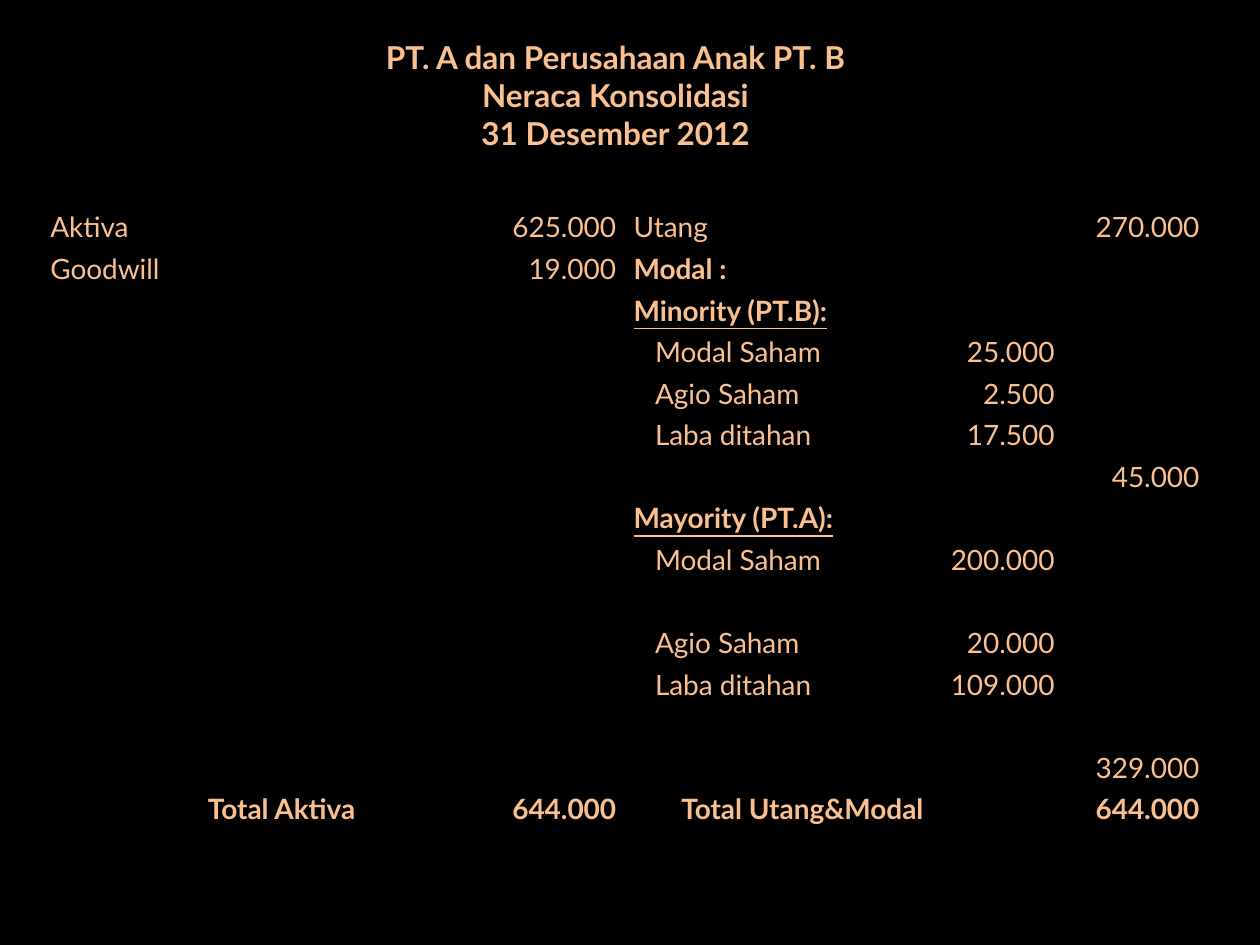
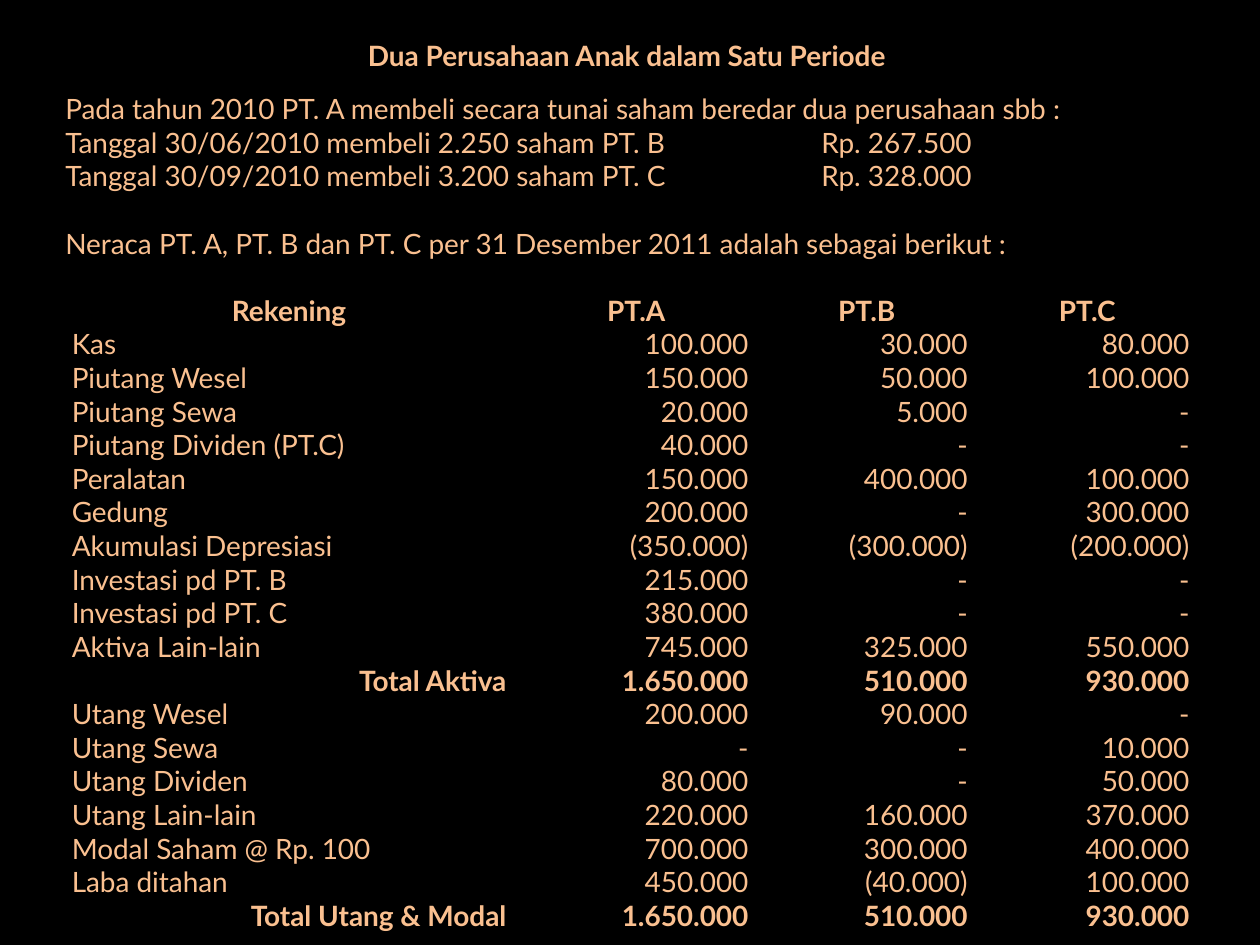
from lxml.etree import SubElement
from pptx import Presentation
from pptx.dml.color import RGBColor
from pptx.enum.shapes import MSO_SHAPE
from pptx.enum.text import MSO_ANCHOR, MSO_AUTO_SIZE, PP_ALIGN as Align
from pptx.oxml.ns import qn
from pptx.util import Inches, Pt

COLORS = {"night": "000000", "peach": "FAC090"}
FONT = "Lato"
BODY_SIZE = 16
NO_GRID_STYLE = "{2D5ABB26-0587-4C30-8999-92F81FD0307C}"
CELL_MARGIN = 0.07
ENTRY_INDENT = 0.17

CONSOLIDATED_COLUMNS = (2.56, 0.94, 1.13, 2.44, 1.04, 1.15)
CONSOLIDATED_HEIGHTS = [0.33] * 8 + [0.66, 0.33, 0.66, 0.33, 0.66]
CONSOLIDATED_ROWS = [
    ("Aktiva", "", "625.000", "Utang", "", "270.000"),
    ("Goodwill", "", "19.000", "Modal :", "", ""),
    ("", "", "", "Minority (PT.B):", "", ""),
    ("", "", "", "Modal Saham", "25.000", ""),
    ("", "", "", "Agio Saham", "2.500", ""),
    ("", "", "", "Laba ditahan", "17.500", ""),
    ("", "", "", "", "", "45.000"),
    ("", "", "", "Mayority (PT.A):", "", ""),
    ("", "", "", "Modal Saham", "200.000", ""),
    ("", "", "", "Agio Saham", "20.000", ""),
    ("", "", "", "Laba ditahan", "109.000", ""),
    ("", "", "", "", "", "329.000"),
    ("Total Aktiva", "", "644.000", "Total Utang&Modal", "", "644.000"),
]

INTRO_LINES = [
    "Pada tahun 2010 PT. A membeli secara tunai saham beredar dua perusahaan sbb :",
    "Tanggal 30/06/2010 membeli 2.250 saham PT. B\tRp. 267.500",
    "Tanggal 30/09/2010 membeli 3.200 saham PT. C\tRp. 328.000",
    "Neraca PT. A, PT. B dan PT. C per 31 Desember 2011 adalah sebagai berikut :",
]

BALANCE_COLUMNS = (3.59, 1.92, 1.74, 1.76)
BALANCE_ROWS = [
    ("Rekening", "PT.A", "PT.B", "PT.C"),
    ("Kas", "100.000", "30.000", "80.000"),
    ("Piutang Wesel", "150.000", "50.000", "100.000"),
    ("Piutang Sewa", "20.000", "5.000", "-"),
    ("Piutang Dividen (PT.C)", "40.000", "-", "-"),
    ("Peralatan", "150.000", "400.000", "100.000"),
    ("Gedung", "200.000", "-", "300.000"),
    ("Akumulasi Depresiasi", "(350.000)", "(300.000)", "(200.000)"),
    ("Investasi pd PT. B", "215.000", "-", "-"),
    ("Investasi pd PT. C", "380.000", "-", "-"),
    ("Aktiva Lain-lain", "745.000", "325.000", "550.000"),
    ("Total Aktiva", "1.650.000", "510.000", "930.000"),
    ("Utang Wesel", "200.000", "90.000", "-"),
    ("Utang Sewa", "-", "-", "10.000"),
    ("Utang Dividen", "80.000", "-", "50.000"),
    ("Utang Lain-lain", "220.000", "160.000", "370.000"),
    ("Modal Saham @ Rp. 100", "700.000", "300.000", "400.000"),
    ("Laba ditahan", "450.000", "(40.000)", "100.000"),
    ("Total Utang & Modal", "1.650.000", "510.000", "930.000"),
]


def color(name):
    """Return the named colour."""
    return RGBColor.from_string(COLORS[name])


def add_text(paragraph, text, align, size=BODY_SIZE, bold=False, underline=False):
    """Add one formatted run to an aligned paragraph."""
    paragraph.alignment = align
    run = paragraph.add_run()
    run.text = text
    font = run.font
    font.name, font.size = FONT, Pt(size)
    font.bold, font.underline = bold, underline
    font.color.rgb = color("peach")


def add_lines(frame, lines, align, **style):
    """Fill a text frame with one paragraph per line."""
    for index, line in enumerate(lines):
        paragraph = frame.paragraphs[0] if index == 0 else frame.add_paragraph()
        add_text(paragraph, line, align, **style)


def add_titled_slide(presentation, lines, box, align, size, margin):
    """Add a dark slide with its title placed in the given box."""
    slide = presentation.slides.add_slide(presentation.slide_layouts[5])
    title = slide.shapes.title
    backdrop = slide.shapes.add_shape(
        MSO_SHAPE.RECTANGLE, 0, 0, presentation.slide_width, presentation.slide_height)
    backdrop.shadow.inherit = False
    backdrop.fill.solid()
    backdrop.fill.fore_color.rgb = color("night")
    backdrop.line.color.rgb = color("night")
    backdrop.line.width = Pt(2)
    title.element.addprevious(backdrop.element)
    title.left, title.top, title.width, title.height = map(Inches, box)
    frame = title.text_frame
    frame.word_wrap = True
    frame.auto_size = MSO_AUTO_SIZE.NONE
    frame.vertical_anchor = MSO_ANCHOR.MIDDLE
    frame.margin_left = frame.margin_right = Inches(margin)
    frame.margin_top = frame.margin_bottom = 0
    add_lines(frame, lines, align, size=size, bold=True)
    return slide


def add_borders(cell, sides):
    """Draw thin borders on the given sides, listed in L, R, T, B order."""
    properties = cell._tc.get_or_add_tcPr()
    for side in sides:
        line = SubElement(properties, qn(f"a:ln{side}"), w=str(Pt(1)))
        fill = SubElement(line, qn("a:solidFill"))
        SubElement(fill, qn("a:srgbClr"), val=COLORS["night"])


def add_plain_table(slide, left, top, widths, heights, rows, cell_style):
    """Add a transparent table whose cell_style rule gives sides, indent and text style."""
    table = slide.shapes.add_table(
        len(rows), len(widths), Inches(left), Inches(top),
        Inches(sum(widths)), Inches(sum(heights))).table
    table.first_row = table.horz_banding = False
    table._tbl.tblPr.find(qn("a:tableStyleId")).text = NO_GRID_STYLE
    for column, width in zip(table.columns, widths):
        column.width = Inches(width)
    for row_index, (row, height) in enumerate(zip(rows, heights)):
        table.rows[row_index].height = Inches(height)
        for column_index, text in enumerate(row):
            cell = table.cell(row_index, column_index)
            sides, indent, style = cell_style(row_index, column_index, text)
            cell.margin_left = Inches(CELL_MARGIN + indent)
            cell.margin_right = Inches(CELL_MARGIN)
            cell.margin_top = cell.margin_bottom = 0
            add_borders(cell, sides)
            cell.fill.background()
            if text:
                add_text(cell.text_frame.paragraphs[0], text, **style)


def consolidated_style(row, column, text):
    """Style a cell of the consolidated balance sheet."""
    is_total = row == len(CONSOLIDATED_ROWS) - 1
    is_group = text.endswith("):")
    is_entry = column == 3 and text in ("Modal Saham", "Agio Saham", "Laba ditahan")
    is_sum = is_total and column in (2, 5)
    sides = "L" if column == 3 else "R" if column == 2 else ""
    sides += "T" if row == 0 or is_sum else ""
    sides += "B" if is_sum or (column == 4 and text and row in (5, 10)) else ""
    align = Align.JUSTIFY if column in (0, 3) and not is_total else Align.RIGHT
    bold = is_total or is_group or text == "Modal :"
    return sides, ENTRY_INDENT if is_entry else 0, dict(
        align=align, bold=bold, underline=is_group)


def balance_style(row, column, text):
    """Style a cell of the three-company balance sheet."""
    is_strong = row == 0 or BALANCE_ROWS[row][0].startswith("Total")
    if row == 0:
        align = Align.CENTER
    elif column == 0 and not is_strong:
        align = Align.JUSTIFY
    else:
        align = Align.RIGHT
    return "LRTB" if is_strong else "LR", 0, dict(align=align, bold=is_strong)


def add_intro(slide, left, top, width, height):
    """Add the purchase details with amounts on a tab stop."""
    frame = slide.shapes.add_textbox(*map(Inches, (left, top, width, height))).text_frame
    frame.word_wrap = True
    frame.vertical_anchor = MSO_ANCHOR.MIDDLE
    add_lines(frame, INTRO_LINES, Align.LEFT)
    for paragraph in frame.paragraphs[1:3]:
        tabs = SubElement(paragraph._p.get_or_add_pPr(), qn("a:tabLst"))
        SubElement(tabs, qn("a:tab"), pos=str(Inches(6)), algn="l")
    frame.paragraphs[-1].space_before = Pt(19.2)


def build_consolidated_slide(presentation):
    """Build the consolidated balance sheet slide."""
    slide = add_titled_slide(
        presentation,
        ["PT. A dan Perusahaan Anak PT. B", "Neraca Konsolidasi", "31 Desember 2012"],
        (2.69, 0.25, 4.39, 1.01), Align.CENTER, 18, 0.1)
    add_plain_table(slide, 0.33, 1.67, CONSOLIDATED_COLUMNS, CONSOLIDATED_HEIGHTS,
                    CONSOLIDATED_ROWS, consolidated_style)


def build_subsidiaries_slide(presentation):
    """Build the slide on two subsidiaries bought in one period."""
    slide = add_titled_slide(
        presentation, ["Dua Perusahaan Anak dalam Satu Periode"],
        (2.92, 0.29, 4.75, 0.29), Align.LEFT, BODY_SIZE, 0)
    add_intro(slide, 0.42, 0.67, 9.17, 1.45)
    heights = [5.07 / len(BALANCE_ROWS)] * len(BALANCE_ROWS)
    add_plain_table(slide, 0.5, 2.33, BALANCE_COLUMNS, heights,
                    BALANCE_ROWS, balance_style)


def main():
    """Build and save the presentation."""
    presentation = Presentation()
    presentation.slide_width, presentation.slide_height = Inches(10), Inches(7.5)
    build_consolidated_slide(presentation)
    build_subsidiaries_slide(presentation)
    presentation.save("out.pptx")


if __name__ == "__main__":
    main()
